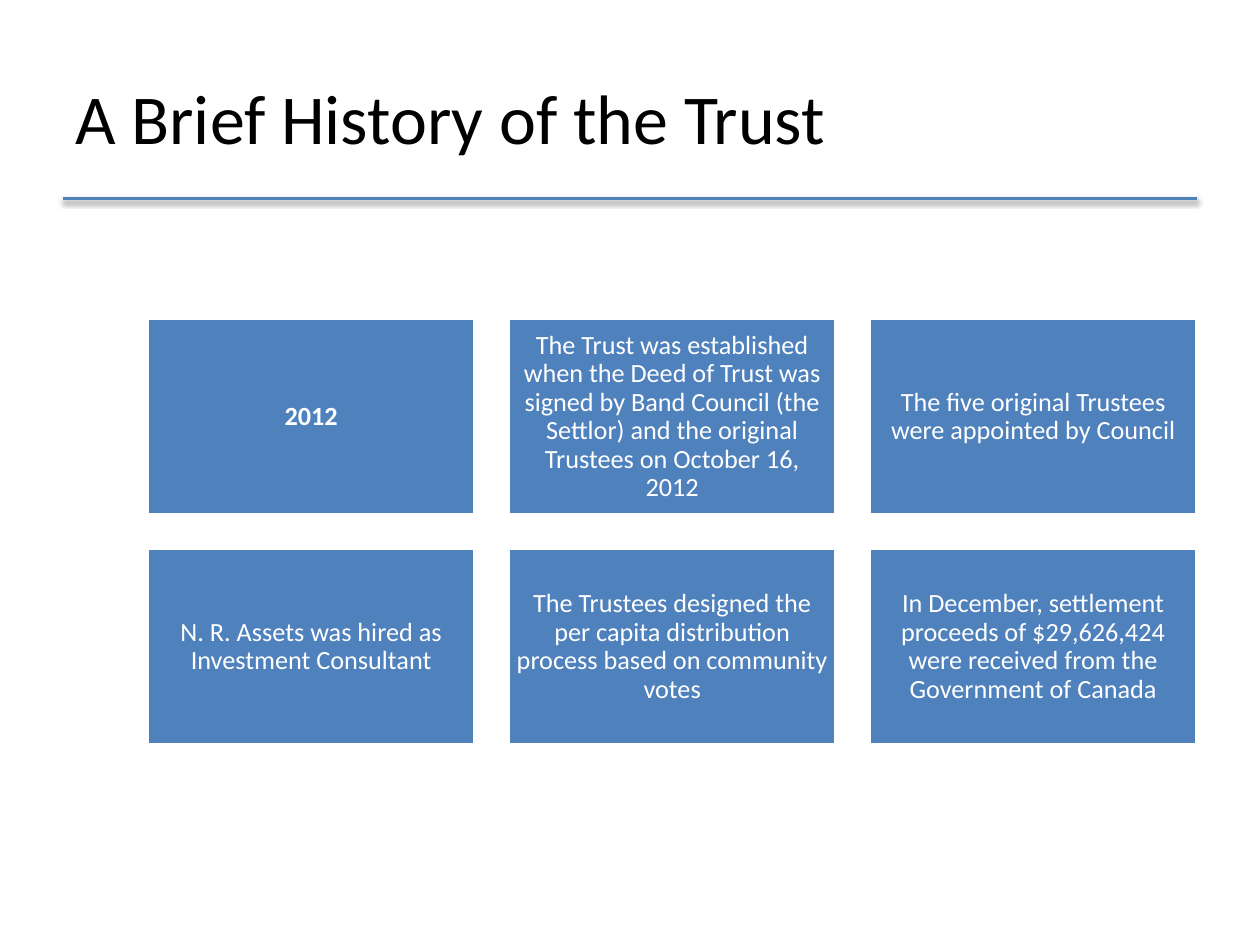
from dataclasses import dataclass
from typing import Any

from lxml import etree
from pptx import Presentation
from pptx.dml.color import RGBColor
from pptx.enum.shapes import MSO_CONNECTOR, MSO_SHAPE
from pptx.enum.text import MSO_ANCHOR, PP_ALIGN
from pptx.oxml.ns import qn
from pptx.util import Inches, Pt

RECT = MSO_SHAPE.RECTANGLE
STRAIGHT = MSO_CONNECTOR.STRAIGHT
MIDDLE = MSO_ANCHOR.MIDDLE
LEFT, CENTER = PP_ALIGN.LEFT, PP_ALIGN.CENTER

WIDTH, HEIGHT = 10, 7.5
COLUMNS = 3
GRID_LEFT, GRID_TOP, GRID_RIGHT = 1.17, 2.53, 9.5
CARD_W, CARD_H = 2.6, 1.56
PITCH_X = (GRID_RIGHT - GRID_LEFT - CARD_W) / (COLUMNS - 1)
PITCH_Y = CARD_H + PITCH_X - CARD_W

EVENTS = [
    "2012",
    "The Trust was established when the Deed of Trust was signed by Band Council "
    "(the Settlor) and the original Trustees on October 16, 2012",
    "The five original Trustees were appointed by Council",
    "N. R. Assets was hired as Investment Consultant",
    "The Trustees designed the per capita distribution process based on community votes",
    "In December, settlement proceeds of $29,626,424 were received from the "
    "Government of Canada",
]


def color(value):
    return RGBColor.from_string(value)


@dataclass
class Deck:
    s: Any
    font: str = "Calibri"
    accent: str = "4F81BD"
    ink: str = "000000"
    paper: str = "FFFFFF"

    def label(self, sp, text, size, ink, align, inset, spacing=1.0, bold=False):
        tf = sp.text_frame
        frame = {"word_wrap": True, "vertical_anchor": MIDDLE}
        frame.update({f"margin_{side}": Inches(gap) for side, gap in inset.items()})
        p = tf.paragraphs[0]
        r = p.add_run()
        formats = [
            (tf, frame),
            (p, {"alignment": align, "line_spacing": spacing}),
            (r, {"text": text}),
            (r.font, {"name": self.font, "size": Pt(size), "bold": bold}),
        ]
        for target, values in formats:
            for name, value in values.items():
                setattr(target, name, value)
        r.font.color.rgb = color(ink)

    def title(self, text, x, y, w, h):
        sp = self.s.shapes.add_textbox(*map(Inches, (x, y, w, h)))
        inset = {"left": 0.1, "right": 0.1, "top": 0.05, "bottom": 0.05}
        self.label(sp, text, 40, self.ink, LEFT, inset)

    def card(self, text, column, row, bold):
        box = (GRID_LEFT + column * PITCH_X, GRID_TOP + row * PITCH_Y, CARD_W, CARD_H)
        sp = self.s.shapes.add_shape(RECT, *map(Inches, box))
        sp.shadow.inherit = False
        sp.fill.solid()
        sp.fill.fore_color.rgb = color(self.accent)
        sp.line.color.rgb = color(self.paper)
        sp.line.width = Pt(2)
        inset = dict.fromkeys(("left", "right", "top", "bottom"), 0.06)
        self.label(sp, text, 15, self.paper, CENTER, inset, 0.9, bold)

    def rule(self, x1, x2, y):
        line = self.s.shapes.add_connector(STRAIGHT, *map(Inches, (x1, y, x2, y)))
        line.line.color.rgb = color(self.accent)
        line.line.width = Pt(2)
        effects = etree.SubElement(line._element.spPr, qn("a:effectLst"))
        shadow = etree.SubElement(
            effects, qn("a:outerShdw"), blurRad=str(Pt(3.1)), dist=str(Pt(1.6)),
            dir="5400000", rotWithShape="0",
        )
        tone = etree.SubElement(shadow, qn("a:srgbClr"), val=self.ink)
        etree.SubElement(tone, qn("a:alpha"), val="38000")


def main():
    prs = Presentation()
    prs.slide_width, prs.slide_height = Inches(WIDTH), Inches(HEIGHT)
    deck = Deck(prs.slides.add_slide(prs.slide_layouts[6]))
    margin = 0.05 * WIDTH
    deck.title("A Brief History of the Trust", margin, 0.04 * HEIGHT, 0.9 * WIDTH, 1.25)
    for index, text in enumerate(EVENTS):
        row, column = divmod(index, COLUMNS)
        deck.card(text, column, row, bold=index == 0)
    deck.rule(margin, WIDTH - margin, 0.21 * HEIGHT)
    prs.save("out.pptx")


if __name__ == "__main__":
    main()
